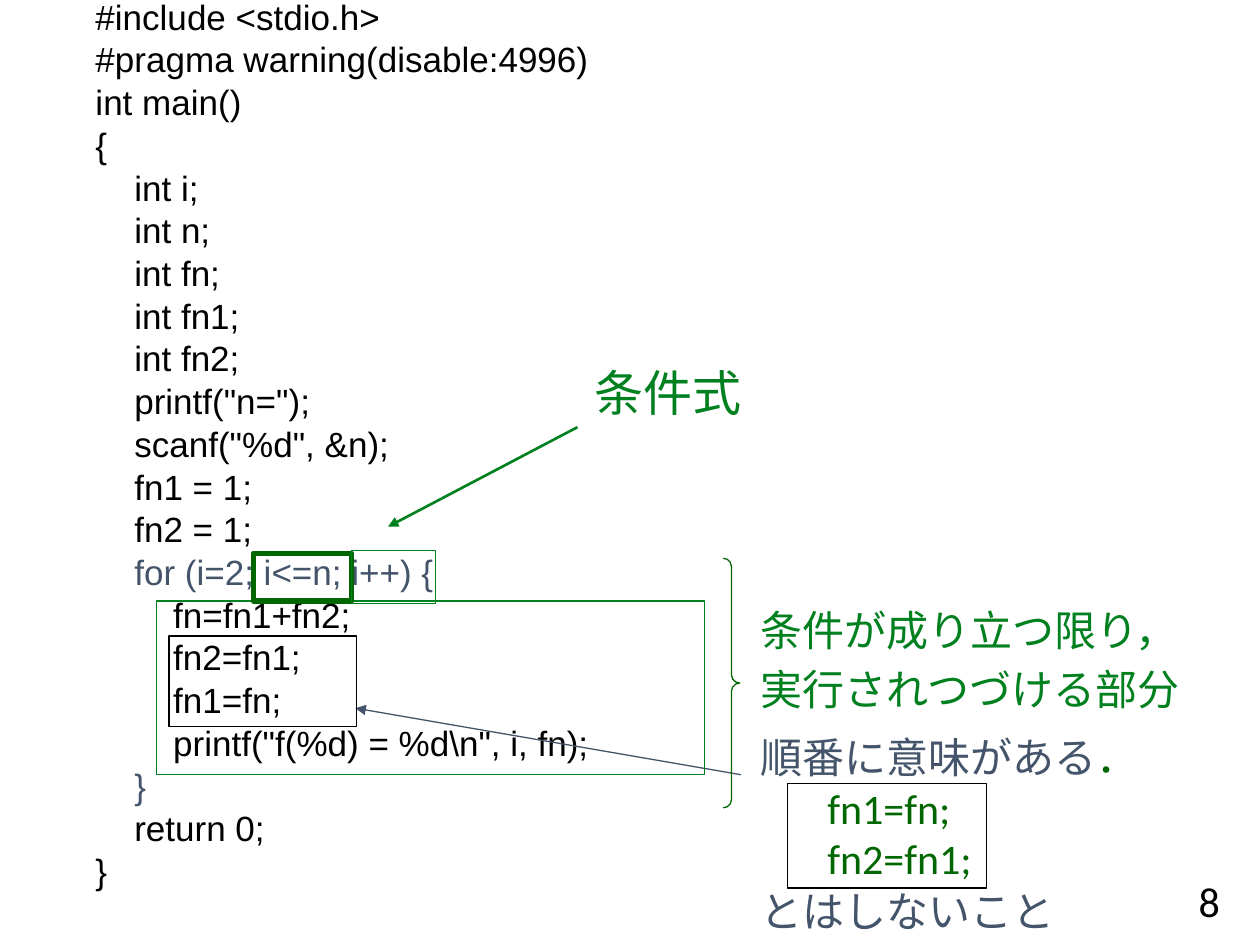
from collections import namedtuple

from lxml import etree
from pptx import Presentation
from pptx.dml import color
from pptx.enum import shapes, text
from pptx.oxml import ns
from pptx.util import Pt

Box = namedtuple("Box", "left top width height")


class Theme:
    BLACK = color.RGBColor(0x00, 0x00, 0x00)
    SLATE = color.RGBColor(0x44, 0x54, 0x6A)
    GREEN = color.RGBColor(0x00, 0x80, 0x1E)
    DARK_GREEN = color.RGBColor(0x00, 0x66, 0x00)
    CODE_FONT, NOTE_FONT = "Arial", "Calibri"
    CODE, NOTE, LABEL = 20, 24, 28
    THIN, MEDIUM, THICK = 0.75, 1.5, 3


CODE_LINES = r'''#include <stdio.h>
#pragma warning(disable:4996)
int main()
{
    int i;
    int n;
    int fn;
    int fn1;
    int fn2;
    printf("n=");
    scanf("%d", &n);
    fn1 = 1;
    fn2 = 1;
    for (i=2; i<=n; i++) {
        fn=fn1+fn2;
        fn2=fn1;
        fn1=fn;
        printf("f(%d) = %d\n", i, fn);
    }
    return 0;
}'''.split("\n")
LOOP_LINES = ("    for (i=2; i<=n; i++) {", "    }")


def inside(box, left, top, width, height):
    return Box(box.left + left, box.top + top, width, height)


def add_text(page, box, lines, size, font=Theme.NOTE_FONT, wrap=False):
    """Each line is a list of (words, colour) spans."""
    frame = page.shapes.add_textbox(*map(Pt, box)).text_frame
    frame.word_wrap = wrap
    if not wrap:
        frame.auto_size = text.MSO_AUTO_SIZE.SHAPE_TO_FIT_TEXT
    for index, spans in enumerate(lines):
        para = frame.paragraphs[0] if index == 0 else frame.add_paragraph()
        for words, ink in spans:
            span = para.add_run()
            span.text = words
            span.font.name, span.font.size = font, Pt(size)
            span.font.color.rgb = ink
    return frame


def add_outline(page, box, ink, weight=Theme.THIN, kind=shapes.MSO_SHAPE.RECTANGLE):
    outline = page.shapes.add_shape(kind, *map(Pt, box))
    outline.shadow.inherit = False
    outline.fill.background()
    outline.line.color.rgb, outline.line.width = ink, Pt(weight)
    return outline


def add_arrow(page, box, start, end, ink, weight):
    """Start and end are offsets from the corner of the box."""
    ends = [Pt(corner + offset) for point in (start, end)
            for corner, offset in zip(box[:2], point)]
    arrow = page.shapes.add_connector(shapes.MSO_CONNECTOR.STRAIGHT, *ends)
    arrow.line.color.rgb, arrow.line.width = ink, Pt(weight)
    etree.SubElement(arrow.line._get_or_add_ln(), ns.qn("a:tailEnd"), type="triangle")
    etree.SubElement(arrow._element.spPr, ns.qn("a:effectLst"))


def add_program(page, box):
    lines = [[(line, Theme.SLATE if line in LOOP_LINES else Theme.BLACK)]
             for line in CODE_LINES]
    frame = add_text(page, box, lines, Theme.CODE, Theme.CODE_FONT, wrap=True)
    for index, para in enumerate(frame.paragraphs):
        para.line_spacing = 0.6
        para.space_before = Pt(10 if index else 0)


def add_order_note(page, box):
    # Arrow to the two assignments whose order matters
    add_arrow(page, box, (-4.3, 28), (-224.6, -10), Theme.SLATE, Theme.THIN)
    frame = add_text(page, box, [
        [("順番に意味がある", Theme.SLATE), ("．", Theme.DARK_GREEN)],
        [("       fn1=fn;", Theme.DARK_GREEN)],
        [("       fn2=fn1;", Theme.DARK_GREEN)],
        [("とはしないこと", Theme.SLATE)],
    ], Theme.NOTE)
    last = frame.paragraphs[-1]
    last.line_spacing, last.space_before = 0.9, Pt(0.2 * Theme.NOTE)
    # Frames of the wrong order and of the right order
    add_outline(page, inside(box, 22.3, 33, 113.8, 59.8), Theme.BLACK)
    add_outline(page, inside(box, -331.2, -51.2, 107.3, 51.8), Theme.BLACK)


def add_loop_note(page, box):
    add_outline(page, inside(box, 0, 24.4, 313.2, 99.4), Theme.GREEN)
    brace = add_outline(page, inside(box, 324, 0, 9.4, 142.6), Theme.DARK_GREEN,
                        kind=shapes.MSO_SHAPE.RIGHT_BRACE)
    brace.adjustments[0] = 0.5
    frame = add_text(page, inside(box, 338.4, 23, 257, 71.3), [
        [("条件が成り立つ限り，", Theme.GREEN)],
        [("実行されつづける部分", Theme.GREEN)],
    ], Theme.NOTE)
    frame.paragraphs[1].space_before = Pt(0.2 * Theme.NOTE)


def add_condition(page, box):
    add_arrow(page, box, (185.3, 40.3), (77, 97.2), Theme.GREEN, Theme.MEDIUM)
    add_text(page, inside(box, 187.9, 0, 98.6, 41),
             [[("条件式", Theme.GREEN)]], Theme.LABEL)
    # Frames of the condition and of the step
    add_outline(page, inside(box, 0, 112.3, 56.2, 27.4), Theme.DARK_GREEN, Theme.THICK)
    add_outline(page, inside(box, 56.2, 110.8, 48.2, 30.2), Theme.GREEN)


def add_page_number(page, box):
    frame = add_text(page, box, [[("8", Theme.BLACK)]], Theme.NOTE, wrap=True)
    frame.vertical_anchor = text.MSO_ANCHOR.MIDDLE
    frame.paragraphs[0].alignment = text.PP_ALIGN.RIGHT


def main():
    deck = Presentation()
    deck.slide_width, deck.slide_height = Pt(720), Pt(540)
    page = deck.slides.add_slide(deck.slide_layouts[6])
    add_program(page, Box(47.5, 2.2, 383.8, 540))
    add_order_note(page, Box(427.7, 414.7, 232.6, 126.7))
    add_loop_note(page, Box(89.3, 319, 595.4, 142.6))
    add_condition(page, Box(144.7, 203.8, 286.5, 141))
    add_page_number(page, Box(542.2, 500.4, 162, 28.8))
    deck.save("out.pptx")


if __name__ == "__main__":
    main()
